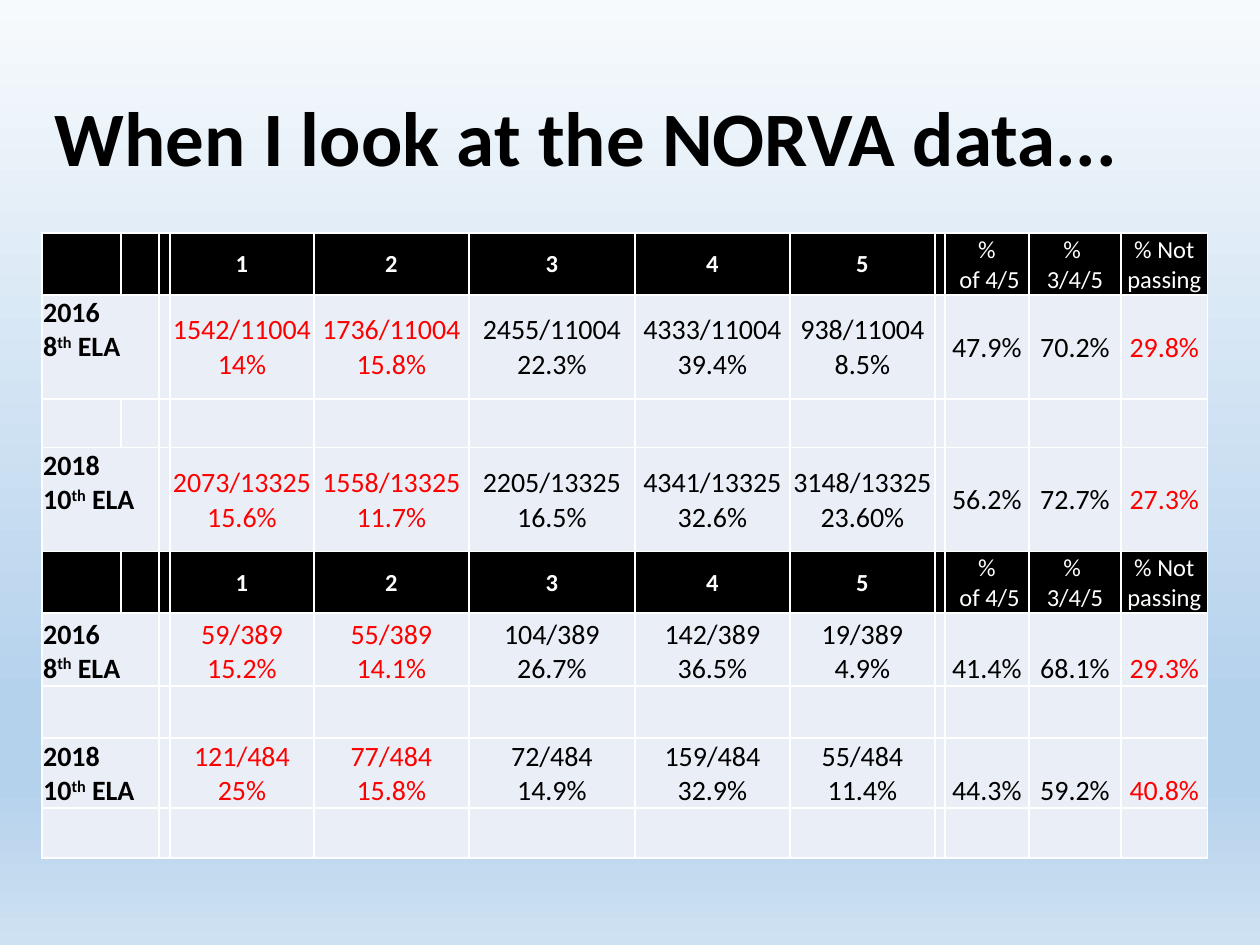
"""Builds a slide with a table of test results for two cohorts."""
from lxml import etree
from pptx import Presentation
from pptx import util as u
from pptx.dml.color import RGBColor
from pptx.enum import text
from pptx.oxml import ns

Pt = u.Pt
FONT = "Calibri"
COLORS = {"black": "000000", "white": "FFFFFF", "red": "FF0000", "cell": "EAEFF7"}
BACKGROUND = [(0, "F7FAFD"), (74, "B5D2EC"), (83, "B5D2EC"), (100, "CEE1F2")]
TOP, MIDDLE, BOTTOM = (text.MSO_ANCHOR.TOP, text.MSO_ANCHOR.MIDDLE,
                       text.MSO_ANCHOR.BOTTOM)

COL_WIDTHS = [45.2, 21.7, 6.3, 82.2, 88.6, 94.9, 88.6, 82.8, 5.7, 48, 52.8, 49.3]
ROW_HEIGHTS = [35.3, 59.4, 28, 59.4, 35, 41.7, 29.8, 40, 28.5]
LEVEL_COL, PERCENT_COL = 3, 9
RED_COLS = (3, 4, 11)
HEADER_ROWS = (0, 4)
MERGED_ROWS = (1, 3, 5, 6, 7, 8)
SUMMARY_HEADS = ["%\n of 4/5", "% \n3/4/5", "% Not passing"]

RESULTS = [
    (1, ("2016", "8"),
     ["1542/11004", "1736/11004", "2455/11004", "4333/11004", "938/11004"],
     ["14%", "15.8%", "22.3%", "39.4%", "8.5%"],
     ["47.9%", "70.2%", "29.8%"], (TOP, MIDDLE, MIDDLE)),
    (3, ("2018", "10"),
     ["2073/13325", "1558/13325", "2205/13325", "4341/13325", "3148/13325"],
     ["15.6%", "11.7%", "16.5%", "32.6%", "23.60%"],
     ["56.2%", "72.7%", "27.3%"], (TOP, MIDDLE, MIDDLE)),
    (5, ("2016", "8"),
     ["59/389", "55/389", "104/389", "142/389", "19/389"],
     ["15.2%", "14.1%", "26.7%", "36.5%", "4.9%"],
     ["41.4%", "68.1%", "29.3%"], (BOTTOM, BOTTOM, BOTTOM)),
    (7, ("2018", "10"),
     ["121/484", "77/484", "72/484", "159/484", "55/484"],
     ["25%", "15.8%", "14.9%", "32.9%", "11.4%"],
     ["44.3%", "59.2%", "40.8%"], (BOTTOM, MIDDLE, BOTTOM)),
]


def set_font(p, size, color, bold=False):
    p.font.name, p.font.size, p.font.bold = FONT, Pt(size), bold
    p.font.color.rgb = RGBColor.from_string(COLORS[color])


def set_background(s):
    fill = s.background.fill
    fill.gradient()
    fill.gradient_angle = 270
    stops = s._element.find(".//" + ns.qn("a:gsLst"))
    for stop in list(stops):
        stops.remove(stop)
    for position, color in BACKGROUND:
        stop = etree.SubElement(stops, ns.qn("a:gs"), pos=str(position * 1000))
        etree.SubElement(stop, ns.qn("a:srgbClr"), val=color)


def add_title(s, title):
    sp = s.shapes.title
    sp.left, sp.top, sp.width, sp.height = Pt(24), Pt(28.8), Pt(646.6), Pt(104.4)
    tf = sp.text_frame
    tf.text = title
    tf.vertical_anchor = MIDDLE
    p = tf.paragraphs[0]
    p.alignment, p.line_spacing = text.PP_ALIGN.LEFT, 0.9
    set_font(p, 44, "black", True)


def style_cell(cell, fill):
    cell.margin_left = cell.margin_right = cell.margin_top = Pt(0.7)
    cell.margin_bottom = 0
    cell.fill.solid()
    cell.fill.fore_color.rgb = RGBColor.from_string(COLORS[fill])
    tc_pr = cell._tc.get_or_add_tcPr()
    for i, side in enumerate(("lnL", "lnR", "lnT", "lnB")):
        line = etree.Element(ns.qn("a:" + side), w=str(Pt(1)))
        solid = etree.SubElement(line, ns.qn("a:solidFill"))
        etree.SubElement(solid, ns.qn("a:srgbClr"), val=COLORS["white"])
        tc_pr.insert(i, line)


def write_cell(cell, content, anchor, size, color, bold=False):
    cell.text = content
    cell.vertical_anchor = anchor
    for p in cell.text_frame.paragraphs:
        p.alignment = text.PP_ALIGN.CENTER
        set_font(p, size, color, bold)


def write_label(cell, year, grade, anchor):
    tf = cell.text_frame
    tf.text = year
    cell.vertical_anchor = anchor
    p = tf.add_paragraph()
    for part in (grade, "th", " ELA"):
        r = p.add_run()
        r.text = part
        if part == "th":
            r._r.get_or_add_rPr().set("baseline", "30000")
    for p in tf.paragraphs:
        set_font(p, 16, "black", True)


def add_grid(s):
    table = s.shapes.add_table(len(ROW_HEIGHTS), len(COL_WIDTHS), Pt(24), Pt(133.2),
                               Pt(sum(COL_WIDTHS)), Pt(sum(ROW_HEIGHTS))).table
    for column, width in zip(table.columns, COL_WIDTHS):
        column.width = Pt(width)
    for i, (row, height) in enumerate(zip(table.rows, ROW_HEIGHTS)):
        row.height = Pt(height)
        for cell in row.cells:
            style_cell(cell, "black" if i in HEADER_ROWS else "cell")
        if i in MERGED_ROWS:
            table.cell(i, 0).merge(table.cell(i, 1))
    return table


def write_header(table, row):
    for i in range(5):
        write_cell(table.cell(row, LEVEL_COL + i), str(i + 1), MIDDLE, 14, "white", True)
    for i, head in enumerate(SUMMARY_HEADS):
        write_cell(table.cell(row, PERCENT_COL + i), head, BOTTOM, 14, "white")


def write_results(table, row, label, counts, shares, summary, anchors):
    write_label(table.cell(row, 0), *label, anchors[0])
    levels = [f"{count}\n{share}" for count, share in zip(counts, shares)]
    groups = ((LEVEL_COL, levels, anchors[1]), (PERCENT_COL, summary, anchors[2]))
    for first, values, anchor in groups:
        for col, value in enumerate(values, first):
            color = "red" if col in RED_COLS else "black"
            write_cell(table.cell(row, col), value, anchor, 16, color)


def main():
    prs = Presentation()
    prs.slide_width, prs.slide_height = Pt(720), Pt(540)
    s = prs.slides.add_slide(prs.slide_layouts[5])
    set_background(s)
    add_title(s, "When I look at the NORVA data...")
    table = add_grid(s)
    for row in HEADER_ROWS:
        write_header(table, row)
    for result in RESULTS:
        write_results(table, *result)
    prs.save("out.pptx")


if __name__ == "__main__":
    main()
